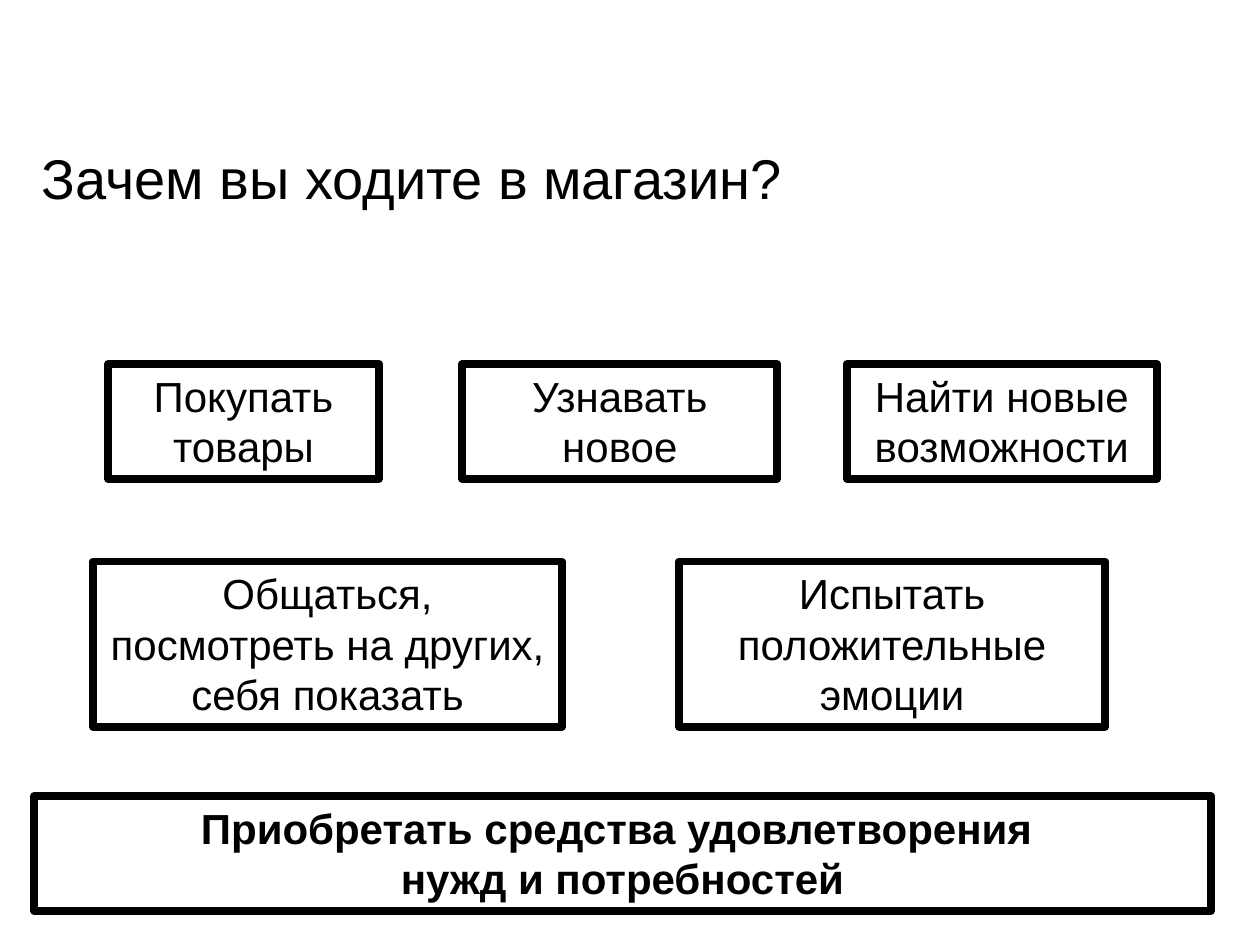
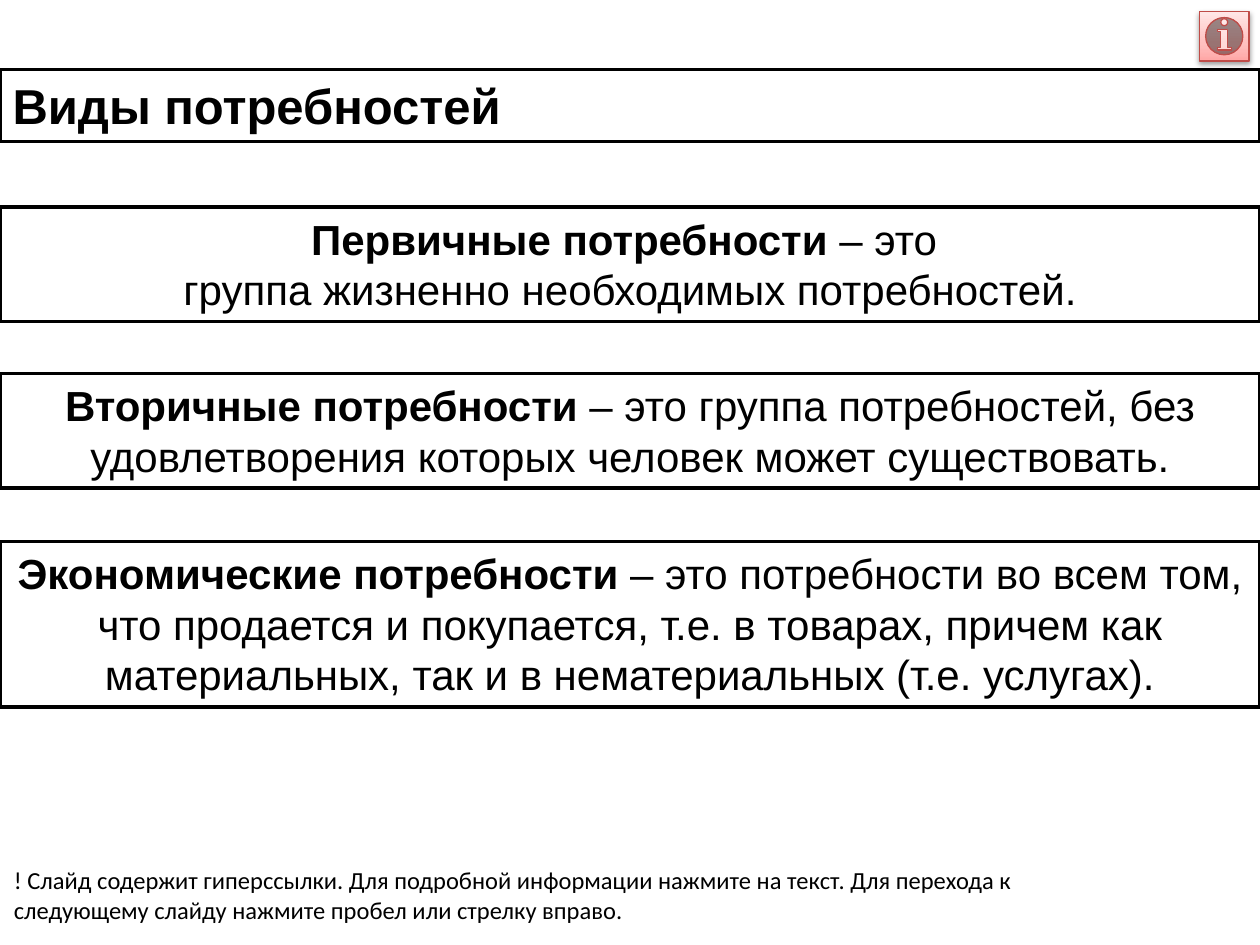
"""Build two slides about shopping motives and kinds of needs."""
from lxml import etree
from pptx import Presentation
from pptx.dml.color import RGBColor
from pptx.enum.shapes import MSO_SHAPE
from pptx.enum.text import MSO_ANCHOR, MSO_AUTO_SIZE, PP_ALIGN
from pptx.oxml import parse_xml
from pptx.util import Cm, Pt

BLACK, WHITE = "000000", "FFFFFF"
DRAWING = "http://schemas.openxmlformats.org/drawingml/2006/main"
WIDTH, HEIGHT = 25.4, 19.05


def color(hex_text):
    """Turn a hex string into a colour."""
    return RGBColor.from_string(hex_text)


def add_span(para, text, size=24, bold=False, font="Arial"):
    """Add formatted text to a paragraph, breaking lines at newlines."""
    for index, line in enumerate(text.split("\n")):
        if index:
            para.add_line_break()
        span = para.add_run()
        span.text = line
        span.font.name, span.font.size, span.font.bold = font, Pt(size), bold
        span.font.color.rgb = color(BLACK)


class Page:
    """Hold the shared style and the current slide."""

    def __init__(self, deck, border):
        """Start a title-only slide whose frames share one border width."""
        self.slide = deck.slides.add_slide(deck.slide_layouts[5])
        self.border = border

    def frame(self, box):
        """Give a box the white fill and black border."""
        box.fill.solid()
        box.fill.fore_color.rgb = color(WHITE)
        box.line.color.rgb = color(BLACK)
        box.line.width = Pt(self.border)

    def fill_text(self, box, spans, align=PP_ALIGN.LEFT, **style):
        """Put (text, bold) spans into a box as one wrapped paragraph."""
        text_frame = box.text_frame
        text_frame.word_wrap = True
        text_frame.auto_size = MSO_AUTO_SIZE.NONE
        text_frame.vertical_anchor = MSO_ANCHOR.TOP
        para = text_frame.paragraphs[0]
        para.alignment = align
        for text, bold in spans:
            add_span(para, text, bold=bold, **style)

    def title(self, text, left, top, width, height, size, bold=False, framed=False):
        """Place and format the title placeholder."""
        box = self.slide.shapes.title
        box.left, box.top, box.width, box.height = map(Cm, (left, top, width, height))
        if framed:
            self.frame(box)
        self.fill_text(box, [(text, bold)], size=size)

    def card(self, spans, left, top, width, height):
        """Add a bordered rectangle with centred text."""
        box = self.slide.shapes.add_shape(
            MSO_SHAPE.RECTANGLE, *map(Cm, (left, top, width, height)))
        box.shadow.inherit = False
        self.frame(box)
        self.fill_text(box, spans, PP_ALIGN.CENTER)

    def note(self, text, left, top, width, height):
        """Add a small plain text box."""
        box = self.slide.shapes.add_textbox(*map(Cm, (left, top, width, height)))
        self.fill_text(box, [(text, False)], size=14, font="Calibri")

    def info_button(self, left, top, side):
        """Add the information button with its gradient and soft shadow."""
        button = self.slide.shapes.add_shape(
            MSO_SHAPE.ACTION_BUTTON_INFORMATION, *map(Cm, (left, top, side, side)))
        button.shadow.inherit = False
        button.line.color.rgb = color("BF4C48")
        button.line.width = Pt(0.75)
        stops = "".join(
            f'<a:gs pos="{place * 1000}"><a:srgbClr val="{tint}"/></a:gs>'
            for place, tint in ((0, "FFA6A5"), (35, "FFC0BF"), (100, "FFE7E7")))
        gradient = parse_xml(
            f'<a:gradFill xmlns:a="{DRAWING}" rotWithShape="1"><a:gsLst>{stops}</a:gsLst>'
            '<a:lin ang="16200000" scaled="1"/></a:gradFill>')
        properties = button.element.spPr
        properties.find(f"{{{DRAWING}}}prstGeom").addnext(gradient)
        effects = properties.find(f"{{{DRAWING}}}effectLst")
        shadow = etree.SubElement(
            effects, f"{{{DRAWING}}}outerShdw", blurRad=str(Pt(3.1)), dist=str(Pt(1.6)),
            dir="5400000", rotWithShape="0")
        tint = etree.SubElement(shadow, f"{{{DRAWING}}}srgbClr", val=BLACK)
        etree.SubElement(tint, f"{{{DRAWING}}}alpha", val="38000")


def build_motives(deck):
    """Build the slide on reasons to visit a shop."""
    page = Page(deck, border=4.5)
    page.title("Зачем вы ходите в магазин?", 0.58, 2.77, 17, 1.63, size=32)
    rows = (
        (7.34, 2.31, (("Покупать товары", 2.18, 5.46),
                      ("Узнавать новое", 9.32, 6.35),
                      ("Найти новые возможности", 17.07, 6.25))),
        (11.32, 3.33, (("Общаться, посмотреть на других, себя показать", 1.88, 9.45),
                       ("Испытать положительные эмоции", 13.69, 8.59))),
    )
    for top, height, motives in rows:
        for text, left, width in motives:
            page.card([(text, False)], left, top, width, height)
    summary = "Приобретать средства удовлетворения \nнужд и потребностей"
    page.card([(summary, True)], 0.69, 16.05, 23.72, 2.31)


def build_needs(deck):
    """Build the slide on kinds of needs."""
    page = Page(deck, border=2)
    page.title("Виды потребностей", 0, 1.4, WIDTH, 1.45, size=28, bold=True, framed=True)
    needs = (
        ("Первичные потребности", " – это \nгруппа жизненно необходимых потребностей.",
         4.17, 2.31),
        ("Вторичные потребности", " – это группа потребностей, без удовлетворения "
         "которых человек может существовать.", 7.53, 2.31),
        ("Экономические потребности ", "– это потребности во всем том, что продается "
         "и покупается, т.е. в товарах, причем как материальных, так и в "
         "нематериальных (т.е. услугах).", 10.92, 3.33),
    )
    for term, meaning, top, height in needs:
        page.card([(term, True), (meaning, False)], 0, top, WIDTH, height)
    page.note("! Слайд содержит гиперссылки. Для подробной информации нажмите на текст. "
              "Для перехода к следующему слайду нажмите пробел или стрелку вправо.",
              0.03, 17.32, 21.29, 1.45)
    page.info_button(24.18, 0.23, 1)


def main():
    """Create and save the deck."""
    deck = Presentation()
    deck.slide_width, deck.slide_height = Cm(WIDTH), Cm(HEIGHT)
    build_motives(deck)
    build_needs(deck)
    deck.save("out.pptx")


if __name__ == "__main__":
    main()
